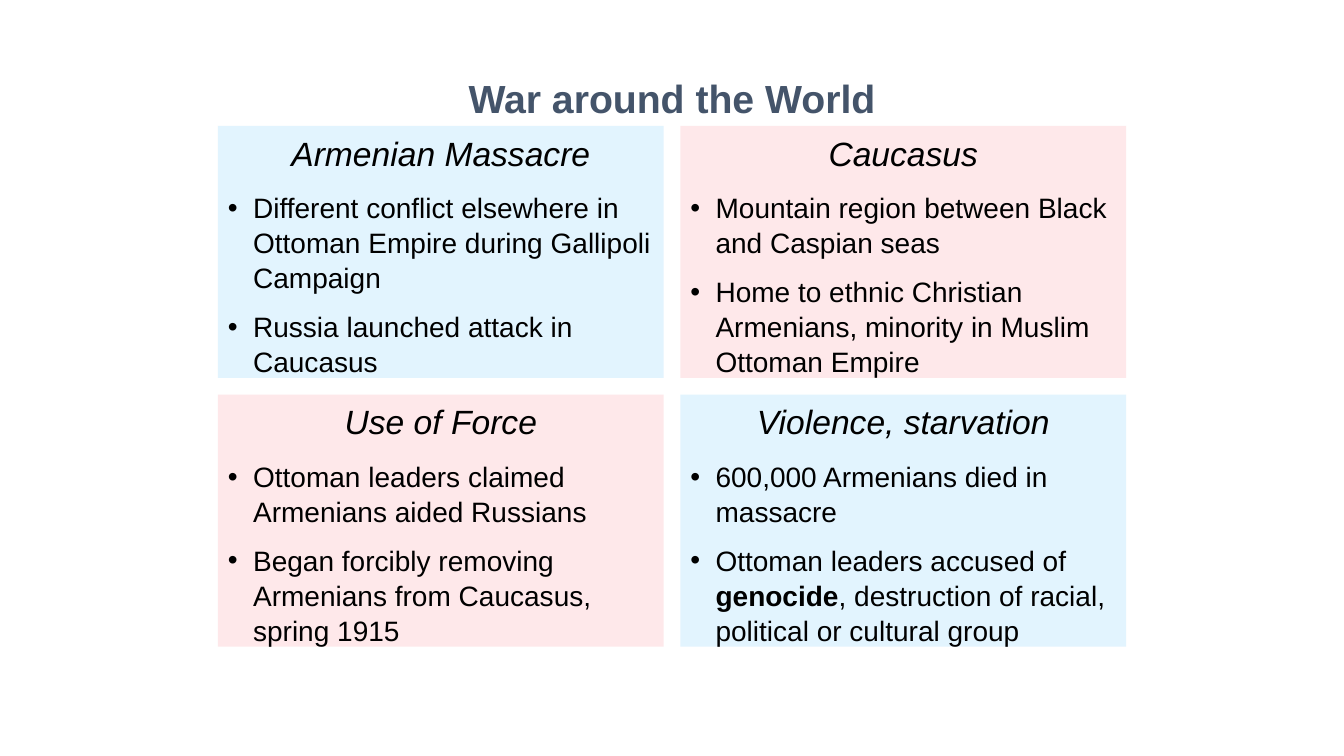
"""Build the "War around the World" slide: a title above four topic panels."""
from dataclasses import dataclass

from lxml import etree
from pptx import Presentation
from pptx.dml.color import RGBColor
from pptx.enum.shapes import MSO_SHAPE as Shape
from pptx.enum.text import MSO_ANCHOR as Anchor, MSO_AUTO_SIZE as AutoSize, PP_ALIGN as Align
from pptx.oxml.ns import qn
from pptx.util import Inches, Pt

TITLE = "War around the World"
KEY_TERM = "genocide"
PANELS = [
    [
        ("Armenian Massacre", [
            "Different conflict elsewhere in Ottoman Empire during Gallipoli Campaign",
            "Russia launched attack in Caucasus",
        ]),
        ("Caucasus", [
            "Mountain region between Black and Caspian seas",
            "Home to ethnic Christian Armenians, minority in Muslim Ottoman Empire",
        ]),
    ],
    [
        ("Use of Force", [
            "Ottoman leaders claimed Armenians aided Russians",
            "Began forcibly removing Armenians from Caucasus, spring 1915",
        ]),
        ("Violence, starvation", [
            "600,000 Armenians died in massacre",
            "Ottoman leaders accused of genocide, destruction of racial, political or cultural group",
        ]),
    ],
]


@dataclass(frozen=True)
class Theme:
    font: str = "Arial"
    title_color: str = "44546A"
    text_color: str = "000000"
    panel_fills: tuple = ("E2F4FE", "FEE8EA")
    title_size: int = 28
    heading_size: int = 24
    bullet_size: int = 20
    line_spacing: float = 1.04


THEME = Theme()
SLIDE_WIDTH, SLIDE_HEIGHT = 13.33, 7.5
TITLE_WIDTH, TITLE_HEIGHT = 8.67, 0.58
PANEL_WIDTH, PANEL_HEIGHT = 4.42, SLIDE_HEIGHT / 3
GAP = SLIDE_HEIGHT / 45
GRID_TOP = SLIDE_HEIGHT / 6
GRID_LEFT = (SLIDE_WIDTH - 2 * PANEL_WIDTH - GAP) / 2
INDENT = Inches(0.25)


def format_run(run, size, color, bold=False, italic=False):
    run.font.name = THEME.font
    run.font.size = Pt(size)
    run.font.color.rgb = RGBColor.from_string(color)
    run.font.bold = bold
    run.font.italic = italic


def format_paragraph(paragraph, size, bullet):
    paragraph.alignment = Align.LEFT if bullet else Align.CENTER
    paragraph.line_spacing = THEME.line_spacing
    paragraph.space_after = Pt(size / 2)
    properties = paragraph._p.get_or_add_pPr()
    properties.set("marL", str(INDENT))
    properties.set("indent", str(-INDENT))
    if bullet:
        etree.SubElement(properties, qn("a:buFont")).set("typeface", THEME.font)
        etree.SubElement(properties, qn("a:buChar")).set("char", "•")


def add_title(slide):
    title = slide.shapes.title
    title.left = Inches((SLIDE_WIDTH - TITLE_WIDTH) / 2)
    title.top = Inches(GRID_TOP - TITLE_HEIGHT)
    title.width, title.height = Inches(TITLE_WIDTH), Inches(TITLE_HEIGHT)
    frame = title.text_frame
    frame.text = TITLE
    frame.auto_size = AutoSize.NONE
    frame.vertical_anchor = Anchor.BOTTOM
    paragraph = frame.paragraphs[0]
    paragraph.alignment = Align.CENTER
    paragraph.line_spacing = 1.0
    format_run(paragraph.runs[0], THEME.title_size, THEME.title_color, bold=True)


def add_panel(slide, row, column, heading, bullets):
    left = GRID_LEFT + column * (PANEL_WIDTH + GAP)
    top = GRID_TOP + row * (PANEL_HEIGHT + GAP)
    panel = slide.shapes.add_shape(
        Shape.RECTANGLE, Inches(left), Inches(top), Inches(PANEL_WIDTH), Inches(PANEL_HEIGHT)
    )
    panel.shadow.inherit = False
    panel.fill.solid()
    panel.fill.fore_color.rgb = RGBColor.from_string(THEME.panel_fills[(row + column) % 2])
    panel.line.fill.background()
    frame = panel.text_frame
    frame.word_wrap = True
    frame.vertical_anchor = Anchor.TOP
    frame.text = heading
    format_paragraph(frame.paragraphs[0], THEME.heading_size, bullet=False)
    format_run(frame.paragraphs[0].runs[0], THEME.heading_size, THEME.text_color, italic=True)
    for bullet in bullets:
        paragraph = frame.add_paragraph()
        format_paragraph(paragraph, THEME.bullet_size, bullet=True)
        for part in filter(None, bullet.partition(KEY_TERM)):
            run = paragraph.add_run()
            run.text = part
            format_run(run, THEME.bullet_size, THEME.text_color, bold=part == KEY_TERM)


def main():
    presentation = Presentation()
    presentation.slide_width = Inches(SLIDE_WIDTH)
    presentation.slide_height = Inches(SLIDE_HEIGHT)
    slide = presentation.slides.add_slide(presentation.slide_layouts.get_by_name("Title Only"))
    add_title(slide)
    for row, panels in enumerate(PANELS):
        for column, (heading, bullets) in enumerate(panels):
            add_panel(slide, row, column, heading, bullets)
    presentation.save("out.pptx")


if __name__ == "__main__":
    main()
